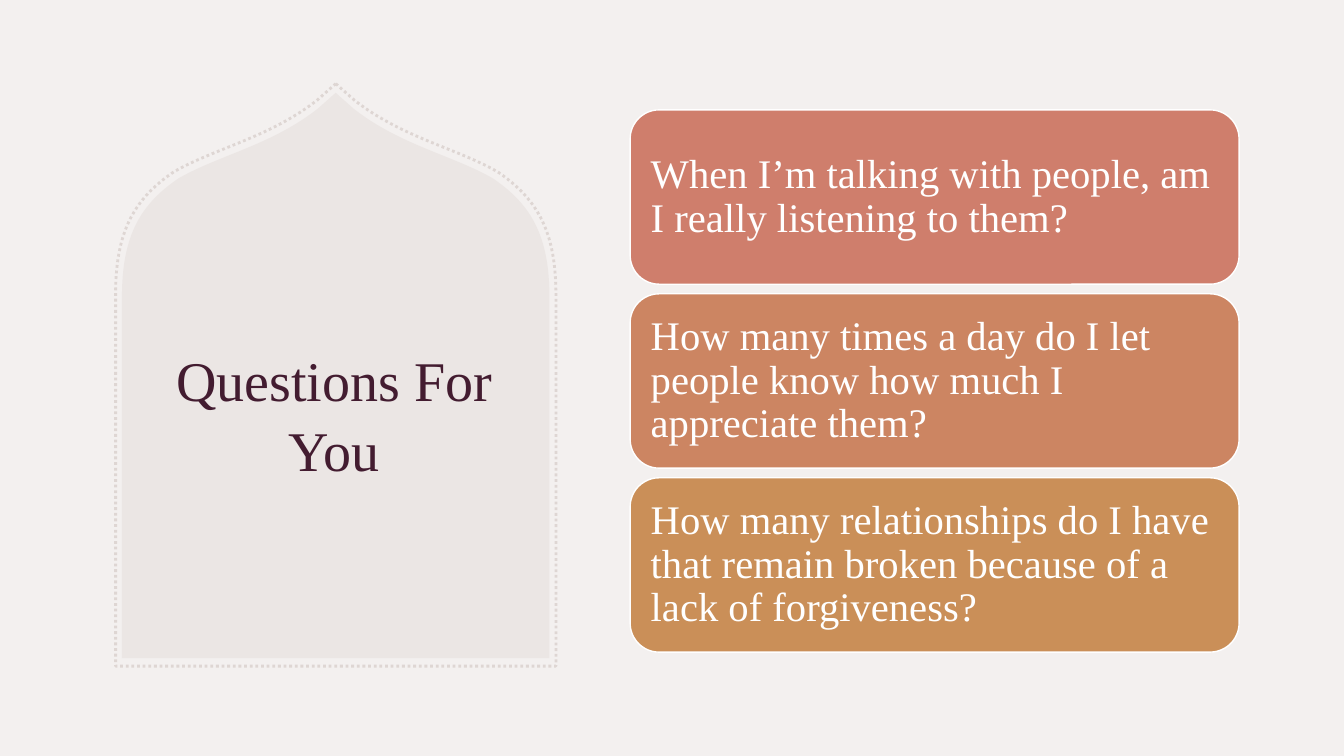
import pptx
import pptx.util
import pptx.dml.color
import pptx.enum.dml
import pptx.enum.shapes
import pptx.enum.text
import pptx.oxml.ns
from lxml import etree

Inches, Pt = pptx.util.Inches, pptx.util.Pt
RGBColor = pptx.dml.color.RGBColor
PP_ALIGN = pptx.enum.text.PP_ALIGN
MIDDLE = pptx.enum.text.MSO_ANCHOR.MIDDLE

FONT = "Times New Roman"
BACKGROUND = RGBColor(0xF3, 0xF0, 0xEF)
ARCH_FILL = RGBColor(0xBF, 0xAF, 0xAA)
ARCH_BORDER = RGBColor(0xDE, 0xD6, 0xD3)
TITLE_COLOR = RGBColor(0x43, 0x1C, 0x30)
WHITE = RGBColor(0xFF, 0xFF, 0xFF)

QUESTIONS = [
    ("When I’m talking with people, am I really listening to them?",
     RGBColor(0xCF, 0x7E, 0x6C)),
    ("How many times a day do I let people know how much I appreciate them?",
     RGBColor(0xCC, 0x85, 0x62)),
    ("How many relationships do I have that remain broken because of a lack of forgiveness?",
     RGBColor(0xCA, 0x8F, 0x58)),
]

# Right half of the arch, in inches from its tip
ARCH_AXIS = 3.33
ARCH_CURVES = [
    [(0.18, 0.16), (0.64, 0.52), (1.16, 0.62), (1.56, 0.85)],
    [(1.56, 0.85), (1.94, 1.11), (2.12, 1.42), (2.12, 2.03)],
]
ARCH_BASE = (2.12, 5.61)
CURVE_STEPS = 24


def curve_point(controls, t):
    weights = ((1 - t) ** 3, 3 * t * (1 - t) ** 2, 3 * t * t * (1 - t), t ** 3)
    return tuple(sum(w * c[axis] for w, c in zip(weights, controls)) for axis in (0, 1))


def add_arch(slide, top, scale):
    """Draw the pointed arch, mirrored about its axis."""
    right = [curve_point(curve, step / CURVE_STEPS)
             for curve in ARCH_CURVES for step in range(CURVE_STEPS + 1)]
    right.append(ARCH_BASE)
    left = [(-x, y) for x, y in reversed(right)]
    points = [(Inches(ARCH_AXIS + x * scale), Inches(top + y * scale))
              for x, y in right + left]
    builder = slide.shapes.build_freeform(Inches(ARCH_AXIS), Inches(top))
    builder.add_line_segments(points, close=True)
    arch = builder.convert_to_shape()
    arch.shadow.inherit = False
    return arch


def fill_translucent(shape, color, percent):
    shape.fill.solid()
    shape.fill.fore_color.rgb = color
    qn = pptx.oxml.ns.qn
    srgb = shape.fill._xPr.find(qn("a:solidFill")).find(qn("a:srgbClr"))
    etree.SubElement(srgb, qn("a:alpha")).set("val", str(percent * 1000))


def write_text(frame, text, size, color, align, spacing):
    frame.text = text
    frame.word_wrap = True
    frame.auto_size = pptx.enum.text.MSO_AUTO_SIZE.NONE
    frame.vertical_anchor = MIDDLE
    paragraph = frame.paragraphs[0]
    paragraph.alignment = align
    paragraph.line_spacing = spacing
    font = paragraph.runs[0].font
    font.name, font.size = FONT, Pt(size)
    font.color.rgb = color


def set_title(slide, text):
    title = slide.shapes.title
    title.left, title.top = Inches(1.61), Inches(2.52)
    title.width, title.height = Inches(3.41), Inches(3.15)
    write_text(title.text_frame, text, 40, TITLE_COLOR, PP_ALIGN.CENTER, 1.04)
    # Bring the title in front of the arch
    slide.shapes._spTree.append(title._element)


def add_question(slide, top, question, color):
    card = slide.shapes.add_shape(
        pptx.enum.shapes.MSO_SHAPE.ROUNDED_RECTANGLE,
        Inches(6.25), Inches(top), Inches(6.04), Inches(1.73))
    card.shadow.inherit = False
    card.fill.solid()
    card.fill.fore_color.rgb = color
    card.line.color.rgb = WHITE
    card.line.width = Pt(1)
    frame = card.text_frame
    write_text(frame, question, 29, WHITE, PP_ALIGN.LEFT, 0.9)
    # The rounded corners already inset the text by 0.08 inch
    frame.margin_left = frame.margin_right = Inches(0.12)
    frame.margin_top = frame.margin_bottom = Inches(0.12)


def main():
    presentation = pptx.Presentation()
    presentation.slide_width, presentation.slide_height = Inches(13.33), Inches(7.5)
    slide = presentation.slides.add_slide(presentation.slide_layouts[5])
    slide.background.fill.solid()
    slide.background.fill.fore_color.rgb = BACKGROUND

    # Arch with dotted border
    panel = add_arch(slide, 0.92, 1)
    fill_translucent(panel, ARCH_FILL, 15)
    panel.line.fill.background()
    border = add_arch(slide, 0.83, 1.03)
    border.fill.background()
    border.line.color.rgb = ARCH_BORDER
    border.line.width = Pt(2)
    border.line.dash_style = pptx.enum.dml.MSO_LINE.ROUND_DOT

    set_title(slide, "Questions For You")

    # Question cards
    for row, (question, color) in enumerate(QUESTIONS):
        add_question(slide, 1.09 + row * 1.825, question, color)

    presentation.save("out.pptx")


if __name__ == "__main__":
    main()
